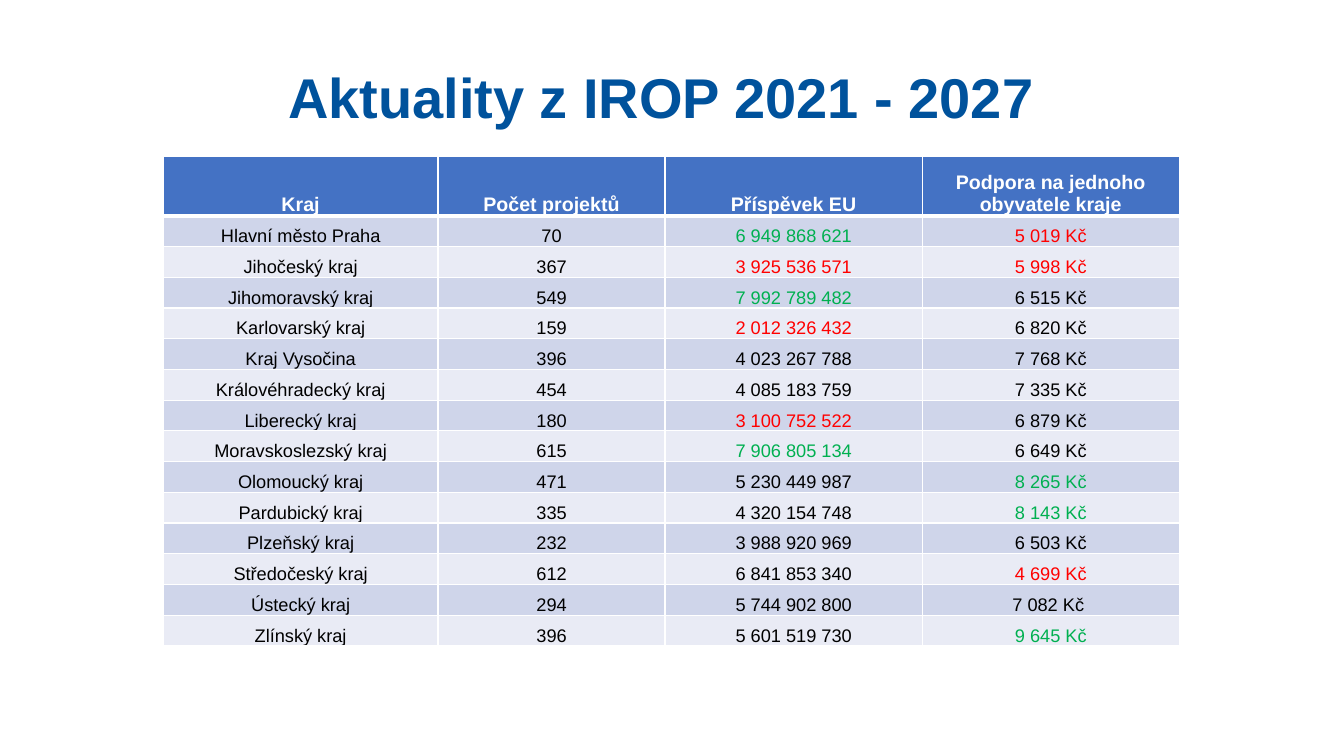
from dataclasses import dataclass

from lxml import etree
from pptx import Presentation
from pptx import util as u
from pptx.dml.color import RGBColor
from pptx.enum import text
from pptx.oxml import ns

COLORS = {
    "title": "00529C",
    "header": "4472C4",
    "odd_row": "CFD5EA",
    "even_row": "E9EBF5",
    "white": "FFFFFF",
    "black": "000000",
    "highest": "00B050",
    "lowest": "FF0000",
}
FONT = "Arial"
RANKED = 3
HEADINGS = ["Kraj", "Počet projektů", "Příspěvek EU", "Podpora na jednoho obyvatele kraje"]
COLUMN_WIDTHS = [6.93, 5.72, 6.48, 6.48]
TABLE_HEIGHT = 12.34
HEADER_HEIGHT = 1.5


@dataclass(frozen=True)
class Region:
    name: str
    projects: int
    contribution: int
    support: int
    unit: str = " Kč"


@dataclass(frozen=True)
class CellStyle:
    fill: str
    color: str
    size: float
    bold: bool = False
    top: float = 1
    bottom: float = 1


REGIONS = [
    Region("Hlavní město Praha", 70, 6949868621, 5019),
    Region("Jihočeský kraj", 367, 3925536571, 5998),
    Region("Jihomoravský kraj", 549, 7992789482, 6515),
    Region("Karlovarský kraj", 159, 2012326432, 6820),
    Region("Kraj Vysočina", 396, 4023267788, 7768),
    Region("Královéhradecký kraj", 454, 4085183759, 7335),
    Region("Liberecký kraj", 180, 3100752522, 6879),
    Region("Moravskoslezský kraj", 615, 7906805134, 6649),
    Region("Olomoucký kraj", 471, 5230449987, 8265),
    Region("Pardubický kraj", 335, 4320154748, 8143),
    Region("Plzeňský kraj", 232, 3988920969, 6503),
    Region("Středočeský kraj", 612, 6841853340, 4699),
    Region("Ústecký kraj", 294, 5744902800, 7082, " Kč "),
    Region("Zlínský kraj", 396, 5601519730, 9645),
]


def spaced(number: int) -> str:
    return f"{number:,}".replace(",", " ")


def rank_color(value: int, values: list[int]) -> str:
    ordered = sorted(values)
    if value in ordered[:RANKED]:
        return "lowest"
    if value in ordered[-RANKED:]:
        return "highest"
    return "black"


def add_run(paragraph, content: str, size: float, color: str, bold: bool) -> None:
    run = paragraph.add_run()
    run.text = content
    run.font.name = FONT
    run.font.size = u.Pt(size)
    run.font.bold = bold
    run.font.color.rgb = RGBColor.from_string(COLORS[color])


def add_border(cell, side: str, width: float) -> None:
    properties = cell._tc.get_or_add_tcPr()
    line = etree.SubElement(properties, ns.qn(f"a:ln{side}"), w=str(u.Pt(width)))
    fill = etree.SubElement(line, ns.qn("a:solidFill"))
    etree.SubElement(fill, ns.qn("a:srgbClr"), val=COLORS["white"])


def fill_cell(cell, content: str, style: CellStyle) -> None:
    for side, width in (("L", 1), ("R", 1), ("T", style.top), ("B", style.bottom)):
        add_border(cell, side, width)
    cell.fill.solid()
    cell.fill.fore_color.rgb = RGBColor.from_string(COLORS[style.fill])
    cell.margin_left = cell.margin_right = cell.margin_top = u.Cm(0.03)
    cell.margin_bottom = 0
    cell.vertical_anchor = text.MSO_ANCHOR.BOTTOM
    paragraph = cell.text_frame.paragraphs[0]
    paragraph.alignment = text.PP_ALIGN.CENTER
    add_run(paragraph, content, style.size, style.color, style.bold)


def add_title(slide) -> None:
    title = slide.shapes.title
    title.left, title.top, title.width, title.height = map(u.Cm, (7.01, 0.69, 19.84, 3.68))
    frame = title.text_frame
    frame.word_wrap = True
    frame.auto_size = text.MSO_AUTO_SIZE.NONE
    frame.vertical_anchor = text.MSO_ANCHOR.MIDDLE
    paragraph = frame.paragraphs[0]
    paragraph.alignment = text.PP_ALIGN.LEFT
    paragraph.line_spacing = 0.9
    paragraph.space_after = u.Pt(6)
    add_run(paragraph, "Aktuality z IROP 2021 - 2027", 40, "title", True)


def add_region_table(slide) -> None:
    table = slide.shapes.add_table(
        len(REGIONS) + 1, len(HEADINGS), u.Cm(4.11), u.Cm(3.94),
        u.Cm(sum(COLUMN_WIDTHS)), u.Cm(TABLE_HEIGHT),
    ).table
    table.horz_banding = False
    for column, width in zip(table.columns, COLUMN_WIDTHS):
        column.width = u.Cm(width)
    row_height = (TABLE_HEIGHT - HEADER_HEIGHT) / len(REGIONS)
    for index, row in enumerate(table.rows):
        row.height = u.Cm(row_height if index else HEADER_HEIGHT)

    for column, heading in enumerate(HEADINGS):
        fill_cell(table.cell(0, column), heading, CellStyle("header", "white", 14, True, bottom=3))

    contributions = [region.contribution for region in REGIONS]
    supports = [region.support for region in REGIONS]
    for row, region in enumerate(REGIONS, start=1):
        entries = [
            (region.name, "black"),
            (str(region.projects), "black"),
            (spaced(region.contribution), rank_color(region.contribution, contributions)),
            (spaced(region.support) + region.unit, rank_color(region.support, supports)),
        ]
        band = "odd_row" if row % 2 else "even_row"
        for column, (content, color) in enumerate(entries):
            style = CellStyle(band, color, 13, top=3 if row == 1 else 1)
            fill_cell(table.cell(row, column), content, style)


def main() -> None:
    presentation = Presentation()
    presentation.slide_width = u.Cm(33.87)
    presentation.slide_height = u.Cm(19.05)
    slide = presentation.slides.add_slide(presentation.slide_layouts[5])
    add_title(slide)
    add_region_table(slide)
    presentation.save("out.pptx")


if __name__ == "__main__":
    main()
